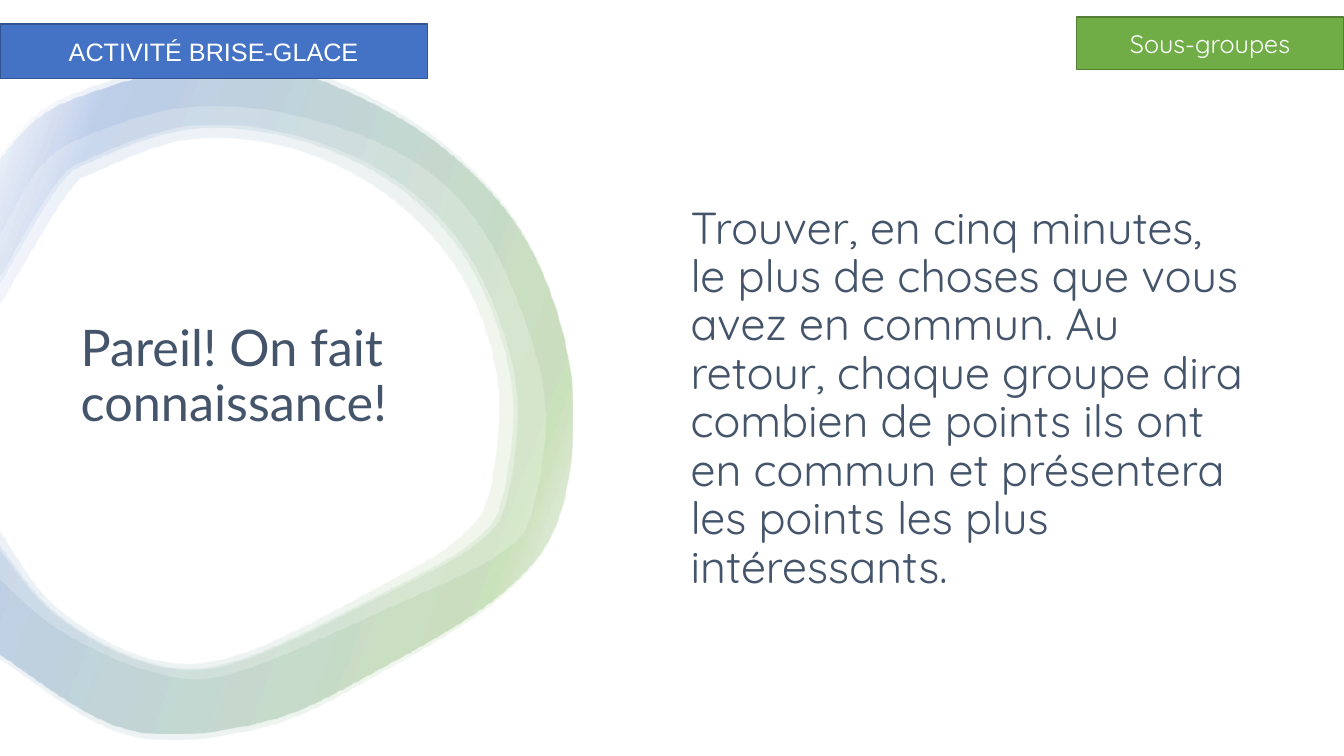
import pptx
import pptx.util
import pptx.oxml
import pptx.dml.color
import pptx.enum.shapes
import pptx.enum.text
from pptx.util import Cm

# Content
TITLE = "Pareil! On fait connaissance!"
BODY = ("Trouver, en cinq minutes, le plus de choses que vous avez en commun. "
        "Au retour, chaque groupe dira combien de points ils ont en commun et "
        "présentera les points les plus intéressants.")
COLORS = {"text": "44546A", "white": "FFFFFF", "green": "70AD47",
          "green_line": "538035", "blue": "4472C4", "blue_line": "325491"}

# Labels: text, font, fill, line, box (left, top, width, height in cm)
LABELS = [
    ("Sous-groupes", "Quicksand", "green", "green_line", (27.13, 0.43, 6.73, 1.32)),
    ("ACTIVITÉ BRISE-GLACE", "Arial", "blue", "blue_line", (0, 0.61, 10.77, 1.37)),
]

# Ring edges run clockwise from the left side of the slide
RING_UNIT = 2.54  # cm per edge unit
CURVE_STEPS = 8
OUTER_EDGE = [(0, 1.58), (0.6, 1.04), (2.1, 0.62), (3.07, 0.76), (4.3, 1.4),
              (5.2, 2.37), (5.65, 3.7), (5.56, 5.04), (5, 5.85), (3.75, 6.63),
              (2.6, 7.15), (1.25, 7.22), (0, 6.48)]
THICK_EDGE = [(0, 3.03), (0.66, 1.94), (0.99, 1.69), (1.9, 1.38), (2.91, 1.48),
              (3.85, 1.95), (4.57, 2.74), (4.92, 3.75), (4.85, 4.85), (4.55, 5.32),
              (3.86, 5.75), (2.4, 6.47), (1.48, 6.52), (0.55, 6), (0, 5.25)]
THIN_EDGE = [(0, 2.34), (0.36, 1.71), (0.8, 1.37), (1.85, 1.06), (2.96, 1.15),
             (4.1, 1.6), (4.86, 2.41), (5.38, 3.85), (5.28, 5.02), (4.96, 5.48),
             (3.91, 6), (2.29, 6.68), (1.48, 6.65), (0.6, 6.25), (0, 5.74)]
# Each ring: share of the way from thick to thin, vertical stretch
RINGS = [(1, 1.02), (0.4, 1), (0, 1), (0.3, 1)]
RING_MIDDLE = 3.96
RING_STOPS = [(2, "white"), (16, "green"), (85, "blue"), (100, "white")]
RING_OPACITY, RING_ANGLE = 10, 200


def color(name):
    return pptx.dml.color.RGBColor.from_string(COLORS[name])


def smooth(knots):
    """Run a Catmull-Rom curve through the knots."""
    padded = [knots[0], *knots, knots[-1]]
    points = [knots[0]]
    for before, start, end, after in zip(padded, padded[1:], padded[2:], padded[3:]):
        for step in range(1, CURVE_STEPS + 1):
            t = step / CURVE_STEPS
            points.append(tuple(
                b + t * (c - a + t * (2 * a - 5 * b + 4 * c - d
                                      + t * (3 * b - a - 3 * c + d))) / 2
                for a, b, c, d in zip(before, start, end, after)))
    return points


def ring_points(thinness, stretch):
    outer = [(x, RING_MIDDLE + (y - RING_MIDDLE) * stretch) for x, y in OUTER_EDGE]
    inner = [tuple(a + (b - a) * thinness for a, b in zip(thick, thin))
             for thick, thin in zip(THICK_EDGE, THIN_EDGE)]
    points = smooth(outer) + smooth(inner)[::-1]
    return [(Cm(x * RING_UNIT), Cm(y * RING_UNIT)) for x, y in points]


def fill_ring(shape):
    stops = "".join(
        f'<a:gs pos="{position * 1000}"><a:srgbClr val="{COLORS[name]}">'
        f'<a:alpha val="{RING_OPACITY * 1000}"/></a:srgbClr></a:gs>'
        for position, name in RING_STOPS)
    gradient = pptx.oxml.parse_xml(
        '<a:gradFill xmlns:a="http://schemas.openxmlformats.org/drawingml/2006/main" '
        f'rotWithShape="1"><a:gsLst>{stops}</a:gsLst>'
        f'<a:lin ang="{RING_ANGLE * 60000}" scaled="0"/></a:gradFill>')
    shape.fill.background()
    properties = shape.element.spPr
    properties.replace(properties.find(pptx.oxml.ns.qn("a:noFill")), gradient)


def place(shape, box):
    shape.left, shape.top, shape.width, shape.height = map(Cm, box)


def write(shape, text, font, size, font_color, alignment, spacing=1.0):
    frame = shape.text_frame
    frame.word_wrap = True
    frame.auto_size = pptx.enum.text.MSO_AUTO_SIZE.NONE
    frame.vertical_anchor = pptx.enum.text.MSO_ANCHOR.MIDDLE
    paragraph = frame.paragraphs[0]
    paragraph.alignment = alignment
    paragraph.line_spacing = spacing
    paragraph.space_before = pptx.util.Pt(0)
    run = paragraph.add_run()
    run.text = text
    run.font.name = font
    run.font.size = pptx.util.Pt(size)
    run.font.color.rgb = color(font_color)
    return paragraph


def main():
    presentation = pptx.Presentation()
    presentation.slide_width, presentation.slide_height = Cm(33.87), Cm(19.05)
    slide = presentation.slides.add_slide(presentation.slide_layouts[1])
    align = pptx.enum.text.PP_ALIGN

    # Title and instructions
    title, body = slide.shapes.title, slide.placeholders[1]
    place(title, (1.78, 3.45, 10.72, 12.14))
    write(title, TITLE, "Lato", 36, "text", align.LEFT, 0.9)
    place(body, (17.15, 2.79, 14.5, 14.53))
    paragraph = write(body, BODY, "Quicksand", 32, "text", align.LEFT, 0.9)
    properties = paragraph._p.get_or_add_pPr()
    properties.set("marL", "0")
    properties.set("indent", "0")
    properties.append(properties.makeelement(pptx.oxml.ns.qn("a:buNone"), {}))

    # Translucent rings behind the text
    group = slide.shapes.add_group_shape()
    for thinness, stretch in RINGS:
        points = ring_points(thinness, stretch)
        builder = group.shapes.build_freeform(*points[0])
        builder.add_line_segments(points[1:], close=True)
        ring = builder.convert_to_shape()
        ring.shadow.inherit = False
        ring.line.fill.background()
        fill_ring(ring)
    title.element.addprevious(group.element)

    # Labels at the top
    for text, font, fill, line, box in LABELS:
        label = slide.shapes.add_shape(pptx.enum.shapes.MSO_SHAPE.RECTANGLE, *map(Cm, box))
        label.shadow.inherit = False
        label.fill.solid()
        label.fill.fore_color.rgb = color(fill)
        label.line.color.rgb = color(line)
        label.line.width = pptx.util.Pt(1)
        write(label, text, font, 18, "white", align.CENTER)

    presentation.save("out.pptx")


if __name__ == "__main__":
    main()
